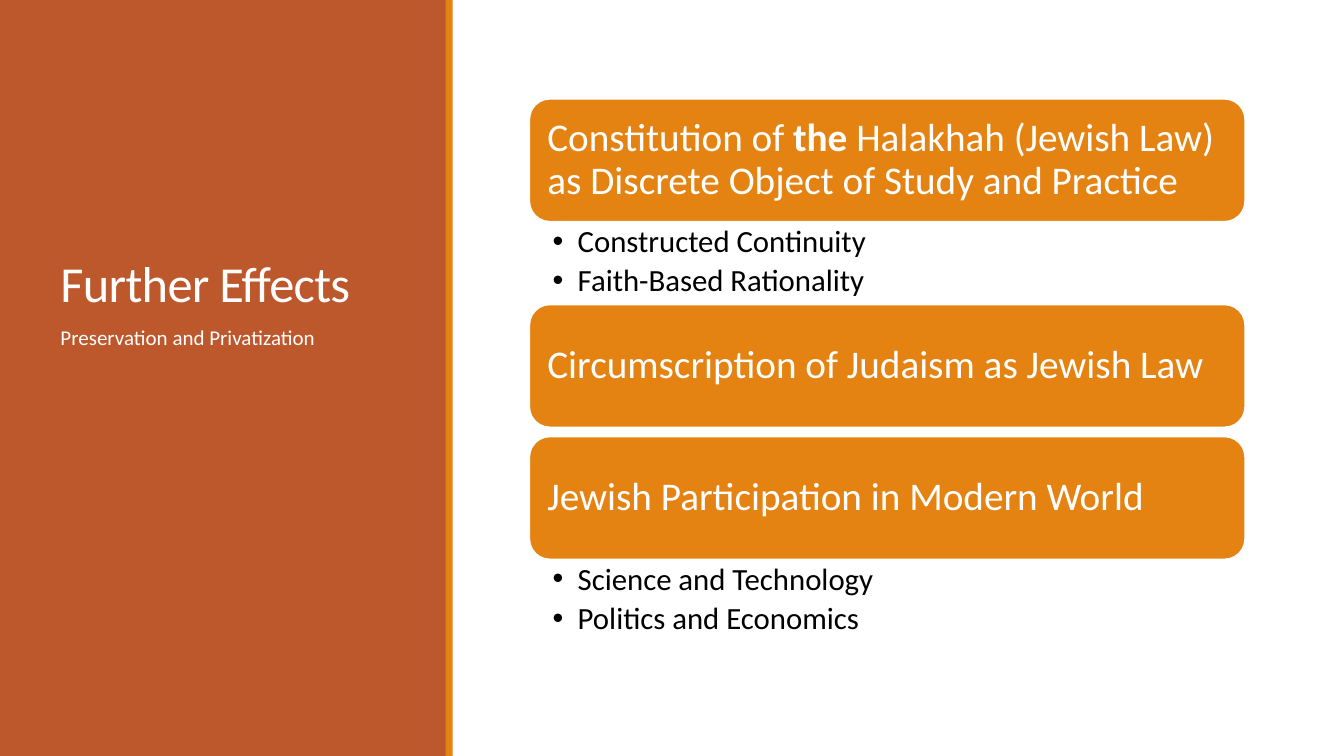
"""Build the Further Effects slide: a caption panel beside three headed themes."""
from dataclasses import dataclass

from pptx import Presentation
from pptx.dml.color import RGBColor
from pptx.enum.shapes import MSO_SHAPE as Preset
from pptx.enum.text import MSO_ANCHOR as Anchor
from pptx.enum.text import MSO_AUTO_SIZE as AutoSize
from pptx.enum.text import PP_ALIGN as Align
from pptx.util import Inches, Pt

RUST = RGBColor(0xBD, 0x58, 0x2C)
ORANGE = RGBColor(0xE4, 0x83, 0x12)
WHITE = RGBColor(0xFF, 0xFF, 0xFF)
BLACK = RGBColor(0x00, 0x00, 0x00)
FONT = "Calibri"
COMPARISON_LAYOUT = 4
CAPTION, FIRST_LIST, SPARE, SECOND_LIST = 1, 2, 3, 4
THEME_LEFT, THEME_WIDTH = 5.25, 7.1
CARD_HEIGHT, LIST_HEIGHT = 1.22, 0.82


@dataclass
class Band:
    left: float
    width: float
    color: RGBColor


@dataclass
class Theme:
    top: float
    heading: list[str]
    points: tuple[str, ...] = ()
    list_index: int = 0


BANDS = [Band(0, 4.43, RUST), Band(4.42, 0.07, ORANGE)]
THEMES = [
    Theme(0.98, ["Constitution of ", "the",
                 " Halakhah (Jewish Law) as Discrete Object of Study and Practice"],
          ("Constructed Continuity", "Faith-Based Rationality"), FIRST_LIST),
    Theme(3.02, ["Circumscription of Judaism as Jewish Law"]),
    Theme(4.33, ["Jewish Participation in Modern World"],
          ("Science and Technology", "Politics and Economics"), SECOND_LIST),
]


def place(box, left: float, top: float, width: float, height: float) -> None:
    box.left, box.top = Inches(left), Inches(top)
    box.width, box.height = Inches(width), Inches(height)


def write(box, paragraphs: list[list[str]], *, size: float, color: RGBColor = WHITE,
          anchor=Anchor.TOP, insets=(0.1, 0.05, 0.1, 0.05), line: float = 0.9,
          before: float = 0, after: float = 0, tracking: int = 0,
          hanging: float = 0) -> None:
    """Write paragraphs of spans, with every second span in bold."""
    frame = box.text_frame
    frame.word_wrap, frame.auto_size = True, AutoSize.NONE
    frame.vertical_anchor = anchor
    frame.margin_left, frame.margin_top, frame.margin_right, frame.margin_bottom = (
        Inches(inset) for inset in insets)
    for number, spans in enumerate(paragraphs):
        para = frame.add_paragraph() if number else frame.paragraphs[0]
        para.alignment, para.line_spacing = Align.LEFT, line
        para.space_before, para.space_after = Pt(before), Pt(after)
        properties = para._p.get_or_add_pPr()
        properties.set("marL", str(Inches(hanging)))
        properties.set("indent", str(-Inches(hanging)))
        for position, text in enumerate(spans):
            span = para.add_run()
            span.text = text
            span.font.name, span.font.size = FONT, Pt(size)
            span.font.color.rgb = color
            span.font.bold = position % 2 == 1
            if tracking:
                span.font._element.set("spc", str(tracking))


def add_filled(page, preset, left: float, top: float, width: float, height: float,
               color: RGBColor):
    box = page.shapes.add_shape(preset, Inches(left), Inches(top),
                                Inches(width), Inches(height))
    box.shadow.inherit = False
    box.fill.solid()
    box.fill.fore_color.rgb = color
    return box


def add_band(page, band: Band, depth: int) -> None:
    box = add_filled(page, Preset.RECTANGLE, band.left, 0, band.width, 7.5, band.color)
    box.line.fill.background()
    box.element.getparent().insert(depth, box.element)


def add_theme(page, theme: Theme) -> None:
    card = add_filled(page, Preset.ROUNDED_RECTANGLE, THEME_LEFT, theme.top,
                      THEME_WIDTH, CARD_HEIGHT, ORANGE)
    card.line.color.rgb, card.line.width = WHITE, Pt(1.25)
    write(card, [theme.heading], size=28, anchor=Anchor.MIDDLE, insets=[0.12] * 4)
    if theme.points:
        box = page.placeholders[theme.list_index]
        place(box, THEME_LEFT, theme.top + CARD_HEIGHT, THEME_WIDTH, LIST_HEIGHT)
        write(box, [[point] for point in theme.points], size=22, color=BLACK,
              insets=(0.23, 0.04, 0.22, 0.04), after=4.4, hanging=0.25)


def main() -> None:
    deck = Presentation()
    deck.slide_width, deck.slide_height = Inches(13.33), Inches(7.5)
    page = deck.slides.add_slide(deck.slide_layouts[COMPARISON_LAYOUT])
    spare = page.placeholders[SPARE].element
    spare.getparent().remove(spare)
    for depth, band in enumerate(BANDS, start=2):
        add_band(page, band, depth)
    title, caption = page.shapes.title, page.placeholders[CAPTION]
    place(title, 0.5, 0.65, 3.5, 2.5)
    write(title, [["Further Effects"]], size=36, anchor=Anchor.BOTTOM,
          line=0.85, tracking=-50)
    place(caption, 0.5, 3.2, 3.5, 3.7)
    write(caption, [["Preservation and Privatization"]], size=15, before=12, after=2)
    for theme in THEMES:
        add_theme(page, theme)
    deck.save("out.pptx")


if __name__ == "__main__":
    main()
